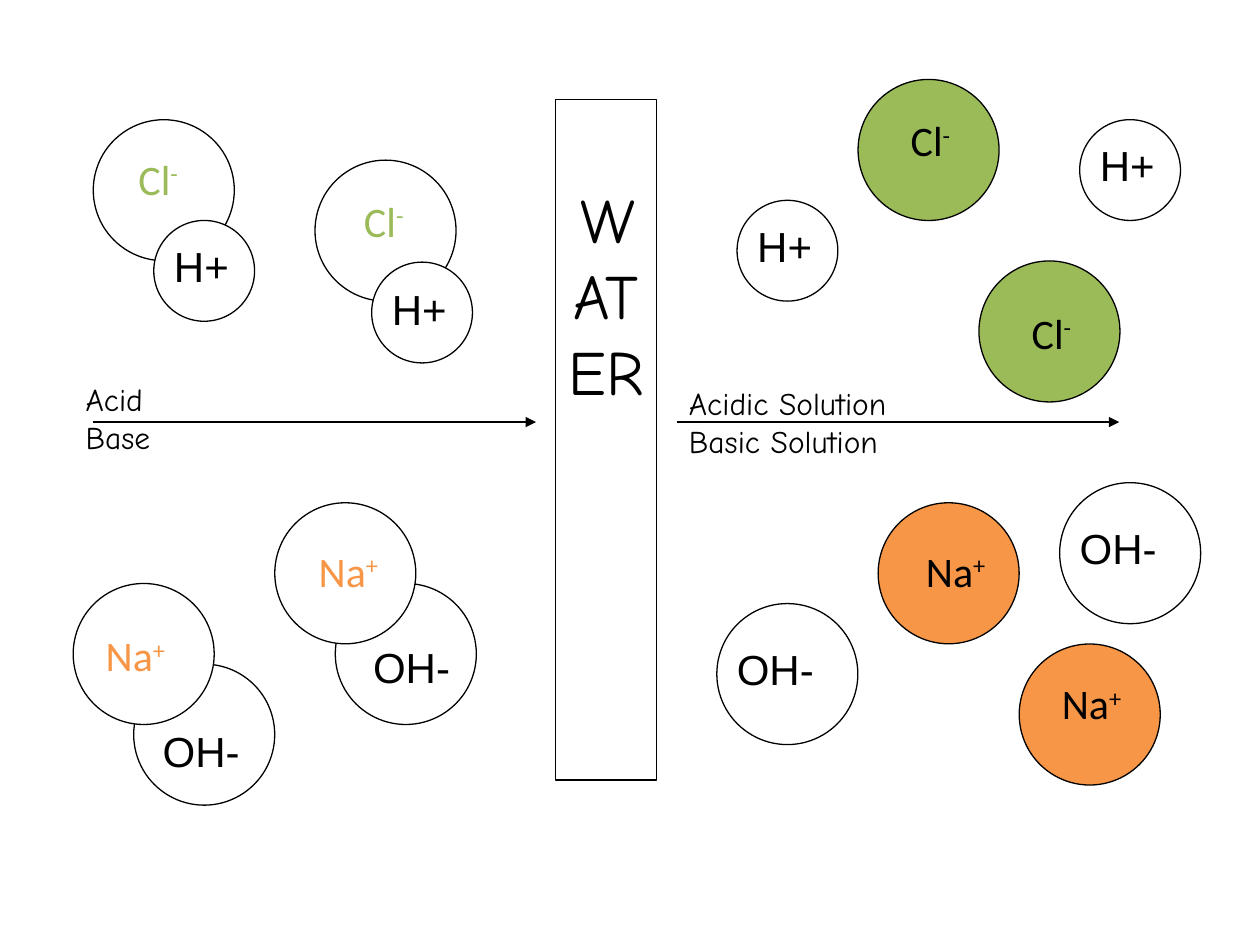
from lxml.etree import SubElement
from pptx import Presentation
from pptx.dml.color import RGBColor
from pptx.enum.shapes import MSO_CONNECTOR, MSO_SHAPE
from pptx.enum.text import MSO_ANCHOR, PP_ALIGN
from pptx.oxml.ns import qn
from pptx.util import Pt

BLACK = RGBColor(0, 0, 0)
WHITE = RGBColor(255, 255, 255)
GREEN = RGBColor(0x9B, 0xBB, 0x59)
ORANGE = RGBColor(0xF7, 0x96, 0x46)
HAND = "Comic Neue"
SMALL, LARGE = 57.6, 80.6

# name: (diameter, charge, raised charge, colour, label width, label height)
IONS = {
    "H": (SMALL, "+", False, None, 46, 41.8),
    "OH": (LARGE, "-", False, None, 69, 41.8),
    "Cl": (LARGE, "-", True, GREEN, 46, 36),
    "Na": (LARGE, "+", True, ORANGE, 65, 36),
}

# (name, left, top, label offset right, label offset down), back to front
BOUND = [
    ("Cl", 11.5, 23, 18.7, 15.8), ("Cl", 138.2, 46.1, 20.9, 16.6),
    ("H", 46.1, 80.6, 11.5, 11.5), ("H", 170.6, 104.4, 11.5, 12.2),
    ("OH", 34.6, 334.1, 16.6, 35.3), ("Na", 0, 288, 11.5, 23),
    ("OH", 149.8, 288, 21.6, 33.1), ("Na", 115.2, 241.9, 18, 20.9),
]
FREE = [
    ("Cl", 103.7, 0, 23, 16.6), ("Cl", 172.8, 103.7, 23, 23),
    ("H", 34.6, 69.1, 11.5, 11.5), ("H", 230.4, 23, 11.5, 11.5),
    ("OH", 23, 299.5, 11.5, 23), ("OH", 218.9, 230.4, 11.5, 23),
    ("Na", 115.2, 241.9, 20.2, 20.9), ("Na", 195.8, 322.6, 17.3, 15.8),
]


def set_font(para, name, size, colour=BLACK):
    para.font.name = name
    para.font.size = Pt(size)
    para.font.color.rgb = colour


def add_outline(slide, kind, left, top, width, height, fill=None):
    shape = slide.shapes.add_shape(kind, Pt(left), Pt(top), Pt(width), Pt(height))
    shape.shadow.inherit = False
    if fill is None:
        shape.fill.background()
    else:
        shape.fill.solid()
        shape.fill.fore_color.rgb = fill
    shape.line.color.rgb = BLACK
    shape.line.width = Pt(0.75)
    return shape


def add_text(slide, left, top, width, height):
    box = slide.shapes.add_textbox(Pt(left), Pt(top), Pt(width), Pt(height))
    box.text_frame.word_wrap = True
    return box.text_frame


def add_ion(slide, left, top, name, right, down, free):
    """Draw an ion; a free one has a coloured ball, a bound one a coloured label."""
    size, charge, raised, colour, width, height = IONS[name]
    fill = colour if free and colour else WHITE
    ink = BLACK if free or not colour else colour
    add_outline(slide, MSO_SHAPE.OVAL, left, top, size, size, fill)
    frame = add_text(slide, left + right, top + down, width, height)
    para = frame.paragraphs[0]
    if raised:
        para.add_run().text = name
        run = para.add_run()
        run.text = charge
        run._r.get_or_add_rPr().set("baseline", "30000")
        set_font(para, "Calibri", 24, ink)
    else:
        frame.margin_left = frame.margin_right = 0
        frame.margin_top = frame.margin_bottom = 0
        para.text = name + charge
        set_font(para, "Arial", 24, ink)


def add_arrow(slide, left, top, length):
    arrow = slide.shapes.add_connector(
        MSO_CONNECTOR.STRAIGHT, Pt(left), Pt(top), Pt(left + length), Pt(top))
    arrow.line.color.rgb = BLACK
    arrow.line.width = Pt(0.75)
    SubElement(arrow.line._get_or_add_ln(), qn("a:tailEnd"), type="triangle")
    SubElement(arrow._element.spPr, qn("a:effectLst"))


def add_side(slide, left, top, ions, words, width, drop, indent, free):
    """Draw the acid above and the base below a captioned arrow."""
    add_arrow(slide, left + indent, top + 195.8, 253)
    frame = add_text(slide, left, top + drop, width, 58)
    frame.text = "\n".join(words)
    for para in frame.paragraphs:
        set_font(para, HAND, 18)
    for name, x, y, right, down in ions:
        add_ion(slide, left + x, top + y, name, right, down, free)


def add_water(slide, left, top, width, height):
    bar = add_outline(slide, MSO_SHAPE.RECTANGLE, left, top, width, height)
    frame = bar.text_frame
    frame.word_wrap = True
    frame.vertical_anchor = MSO_ANCHOR.TOP
    frame.margin_top = Pt(46.5)
    para = frame.paragraphs[0]
    para.text = "WATER"
    para.alignment = PP_ALIGN.CENTER
    set_font(para, HAND, 36)


def main():
    deck = Presentation()
    deck.slide_width, deck.slide_height = Pt(720), Pt(540)
    slide = deck.slides.add_slide(deck.slide_layouts[6])
    add_water(slide, 317.5, 56.9, 57.6, 388.8)
    add_side(slide, 41.8, 45.4, BOUND, ("Acid", "Base"), 104, 168.5, 11.5, False)
    add_side(slide, 386.6, 45.4, FREE, ("Acidic Solution", "Basic Solution"),
             184, 170.6, 0, True)
    deck.save("out.pptx")


if __name__ == "__main__":
    main()
